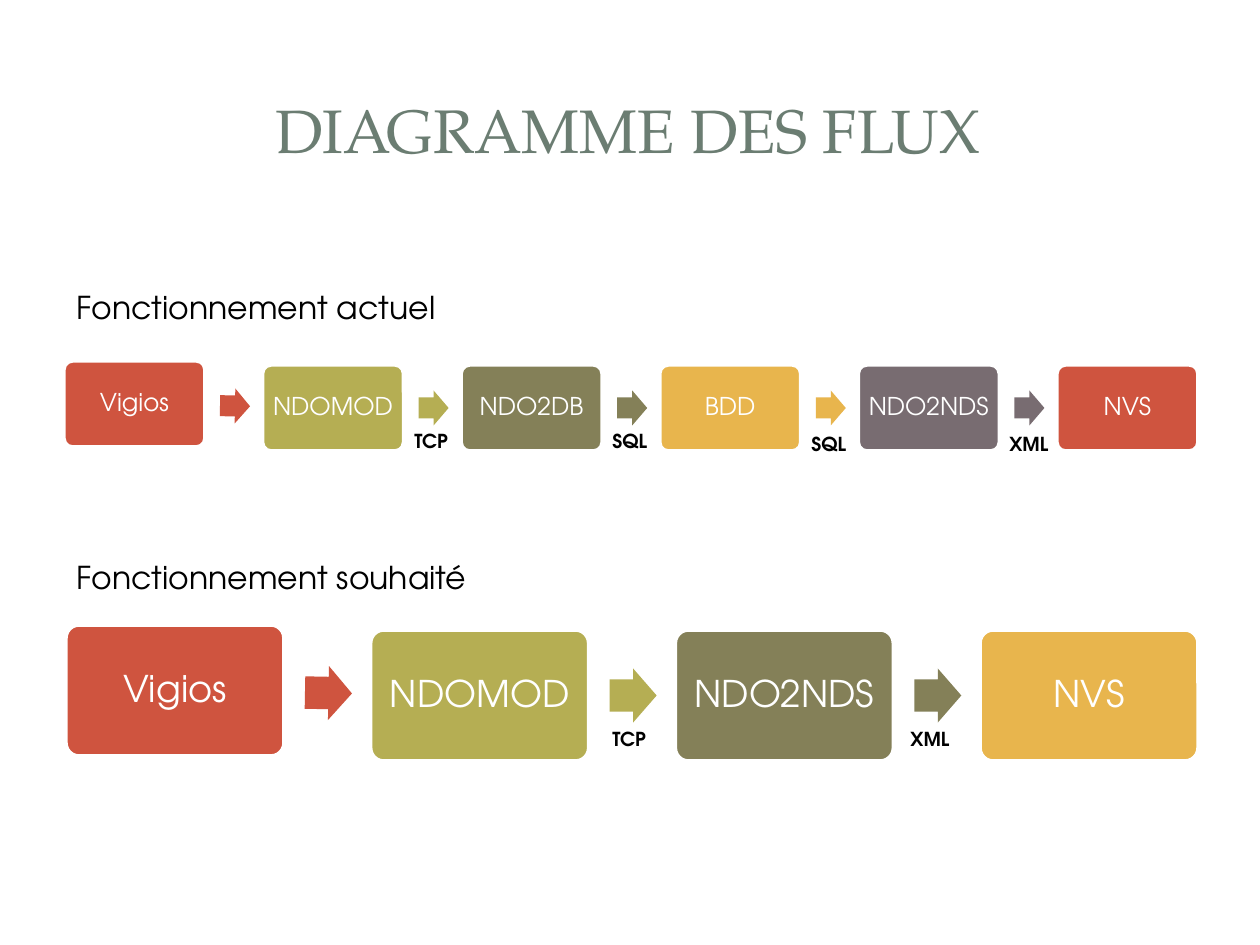
"""Builds a slide comparing the current and the desired data flow."""
from pptx import Presentation
from pptx.dml.color import RGBColor
from pptx.enum.shapes import MSO_SHAPE
from pptx.enum.text import MSO_ANCHOR, PP_ALIGN
from pptx.util import Emu, Pt

ROUNDED = MSO_SHAPE.ROUNDED_RECTANGLE
ARROW = MSO_SHAPE.RIGHT_ARROW
MIDDLE = MSO_ANCHOR.MIDDLE
CENTER = PP_ALIGN.CENTER

PIXEL = 914400 / 126
TITLE_FONT = "TeX Gyre Pagella"
BODY_FONT = "TeX Gyre Adventor"
WHITE, BLACK, TITLE_COLOR = "FFFFFF", "000000", "6B7D72"
RED, GREEN, OLIVE, YELLOW, PLUM = "CF543F", "B5AE53", "848058", "E8B54D", "786C71"

TITLE = "DIAGRAMME DES FLUX"
FLOWS = [
    {
        "heading": "Fonctionnement actuel", "heading_top": 282,
        "steps": [("Vigios", RED), ("NDOMOD", GREEN), ("NDO2DB", OLIVE),
                  ("BDD", YELLOW), ("NDO2NDS", PLUM), ("NVS", RED)],
        "protocols": [("TCP", 402, 423), ("SQL", 600, 423),
                      ("SQL", 799, 426), ("XML", 997, 426)],
        "first_left": 64, "last_left": 1057, "top": 365, "first_lift": 4,
        "box": (141, 86), "arrow": (30, 35), "arrow_offset": 156,
        "inset": 7, "font_size": 14,
    },
    {
        "heading": "Fonctionnement souhaité", "heading_top": 552,
        "steps": [("Vigios", RED), ("NDOMOD", GREEN),
                  ("NDO2NDS", OLIVE), ("NVS", YELLOW)],
        "protocols": [("TCP", 600, 721), ("XML", 898, 721)],
        "first_left": 66, "last_left": 980, "top": 630, "first_lift": 5,
        "box": (218, 131), "arrow": (47, 54), "arrow_offset": 239,
        "inset": 11, "font_size": 21,
    },
]


def px(value):
    return Emu(round(value * PIXEL))


def color(hex_string):
    return RGBColor.from_string(hex_string)


def write(shape, text, size, hex_string, font_name=BODY_FONT, bold=False):
    shape.text_frame.text = text
    paragraph = shape.text_frame.paragraphs[0]
    font = paragraph.runs[0].font
    font.name, font.size, font.bold = font_name, Pt(size), bold
    font.color.rgb = color(hex_string)
    return paragraph


def add_filled(slide, kind, left, top, size, fill):
    shape = slide.shapes.add_shape(kind, px(left), px(top), px(size[0]), px(size[1]))
    shape.shadow.inherit = False
    shape.fill.solid()
    shape.fill.fore_color.rgb = color(fill)
    shape.line.fill.background()
    return shape


def add_label(slide, text, left, top, width, height, size, bold=False):
    label = slide.shapes.add_textbox(px(left), px(top), px(width), px(height))
    label.text_frame.word_wrap = True
    write(label, text, size, BLACK, bold=bold)


def add_step(slide, flow, text, fill, left, top):
    box = add_filled(slide, ROUNDED, left, top, flow["box"], fill)
    box.adjustments[0] = 0.1
    box.line.color.rgb = color(WHITE)
    box.line.width = Pt(2)
    frame = box.text_frame
    frame.margin_left = frame.margin_right = px(flow["inset"])
    frame.margin_top = frame.margin_bottom = px(flow["inset"])
    frame.vertical_anchor = MIDDLE
    frame.word_wrap = False
    paragraph = write(box, text, flow["font_size"], WHITE)
    paragraph.alignment = CENTER
    paragraph.line_spacing = 0.9


def add_flow(slide, flow):
    steps = flow["steps"]
    pitch = (flow["last_left"] - flow["first_left"]) / (len(steps) - 1)
    box_height, arrow_height = flow["box"][1], flow["arrow"][1]
    for index, (text, fill) in enumerate(steps):
        left = flow["first_left"] + index * pitch
        lift = flow["first_lift"] if index == 0 else 0
        add_step(slide, flow, text, fill, left, flow["top"] - lift)
        if index < len(steps) - 1:
            arrow_top = flow["top"] + (box_height - arrow_height - lift) / 2
            arrow = add_filled(slide, ARROW, left + flow["arrow_offset"],
                               arrow_top, flow["arrow"], fill)
            arrow.adjustments[0] = 0.6
            arrow.adjustments[1] = 0.5
            arrow.rotation = 1.1 if lift else 0
    for text, left, top in flow["protocols"]:
        add_label(slide, text, left, top, 79, 36, 11, bold=True)
    add_label(slide, flow["heading"], 64, flow["heading_top"], 525, 50, 18)


def main():
    presentation = Presentation()
    presentation.slide_width, presentation.slide_height = px(1260), px(945)
    slide = presentation.slides.add_slide(presentation.slide_layouts[5])
    title = slide.shapes.title
    title.left, title.top, title.width, title.height = px(59), px(57), px(1138), px(144)
    title.text_frame.vertical_anchor = MIDDLE
    write(title, TITLE, 35, TITLE_COLOR, TITLE_FONT).alignment = CENTER
    for flow in FLOWS:
        add_flow(slide, flow)
    presentation.save("out.pptx")


if __name__ == "__main__":
    main()
